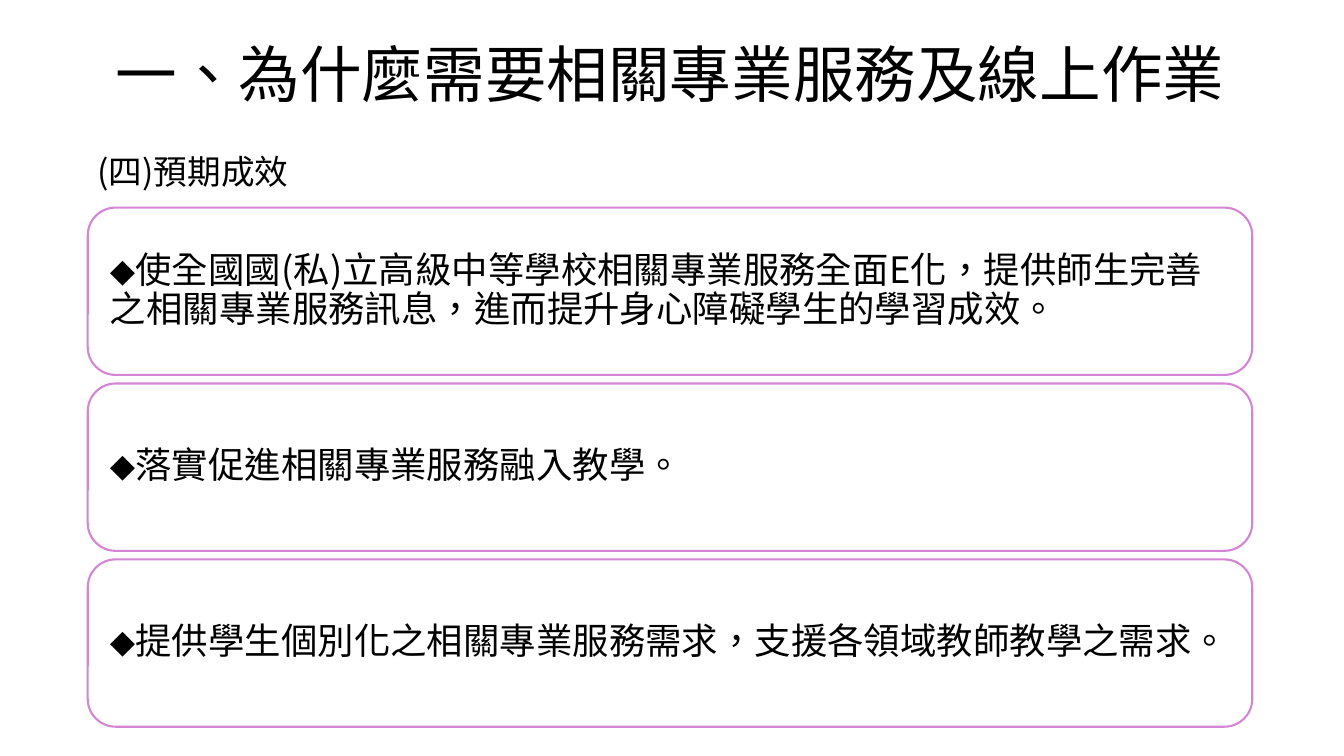
from pptx import Presentation
from pptx.dml.color import RGBColor
from pptx.enum.lang import MSO_LANGUAGE_ID
from pptx.enum.shapes import MSO_SHAPE
from pptx.enum.text import MSO_ANCHOR, MSO_AUTO_SIZE, PP_ALIGN
from pptx.oxml.ns import qn
from pptx.util import Inches, Pt

BLACK = RGBColor(0x00, 0x00, 0x00)
WHITE = RGBColor(0xFF, 0xFF, 0xFF)
ORCHID = RGBColor(0xD4, 0x86, 0xD4)
CHINESE_FONT = "Noto Sans CJK SC"
SYMBOL_FONT = "DejaVu Sans"

LEFT = 0.87
CARD_TOP, CARD_WIDTH, CARD_HEIGHT, CARD_PITCH = 2.06, 11.55, 1.66, 1.745


def write(box, text, size, align=PP_ALIGN.LEFT, spacing=1.0, bullet="", inset=0.1):
    frame = box.text_frame
    frame.word_wrap = True
    frame.auto_size = MSO_AUTO_SIZE.NONE
    frame.vertical_anchor = MSO_ANCHOR.MIDDLE
    frame.margin_left = frame.margin_right = Inches(inset)
    para = frame.paragraphs[0]
    para.alignment = align
    para.line_spacing = spacing
    for words, font_name in ((bullet, SYMBOL_FONT), (text, CHINESE_FONT)):
        if not words:
            continue
        span = para.add_run()
        span.text = words
        span.font.size = Pt(size)
        span.font.color.rgb = BLACK
        span.font.name = font_name
        span.font.language_id = MSO_LANGUAGE_ID.TRADITIONAL_CHINESE
        # East Asian typeface follows the Latin one
        properties = span.font._element
        latin = properties.find(qn("a:latin"))
        east_asian = properties.makeelement(qn("a:ea"), {"typeface": font_name})
        latin.addnext(east_asian)


deck = Presentation()
deck.slide_width, deck.slide_height = Inches(13.33), Inches(7.5)
page = deck.slides.add_slide(deck.slide_layouts[5])

# Title
title = page.shapes.title
title.left, title.top = Inches(0.65), Inches(0.22)
title.width, title.height = Inches(12), Inches(1.01)
write(title, "一、為什麼需要相關專業服務及線上作業", 44, align=PP_ALIGN.CENTER)

# Section heading
heading = page.shapes.add_textbox(Inches(LEFT), Inches(1.07), Inches(12), Inches(1.25))
write(heading, "(四)預期成效", 24)

# Outcome cards
outcomes = [
    "使全國國(私)立高級中等學校相關專業服務全面E化，提供師生完善之相關專業服務訊息，進而提升身心障礙學生的學習成效。",
    "落實促進相關專業服務融入教學。",
    "提供學生個別化之相關專業服務需求，支援各領域教師教學之需求。",
]
for row, outcome in enumerate(outcomes):
    card = page.shapes.add_shape(
        MSO_SHAPE.ROUNDED_RECTANGLE,
        Inches(LEFT), Inches(CARD_TOP + row * CARD_PITCH),
        Inches(CARD_WIDTH), Inches(CARD_HEIGHT),
    )
    card.shadow.inherit = False
    card.fill.solid()
    card.fill.fore_color.rgb = WHITE
    card.line.color.rgb = ORCHID
    card.line.width = Pt(1.5)
    write(card, outcome, 26, spacing=0.9, bullet="⬥", inset=0.14)

deck.save("out.pptx")
